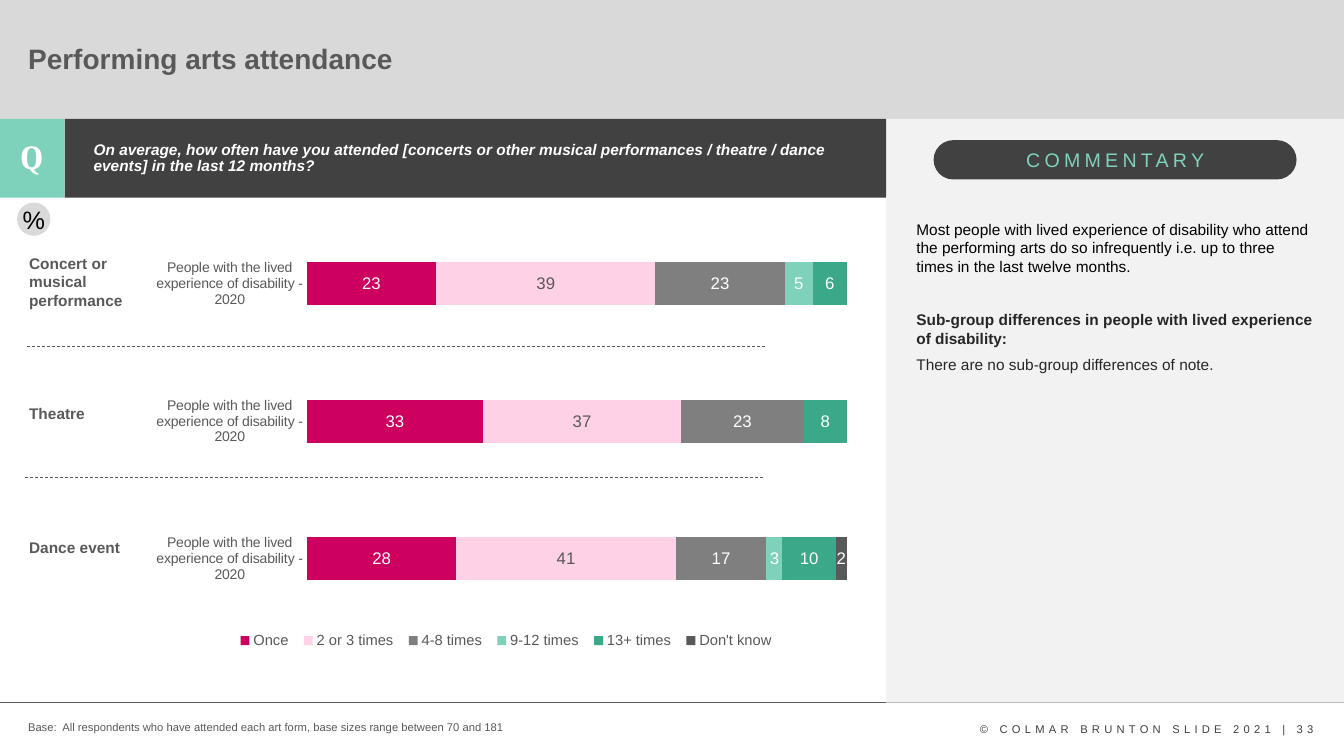
import pptx
import pptx.chart.data
import pptx.dml.color
import pptx.enum.chart
import pptx.enum.dml
import pptx.enum.shapes
import pptx.enum.text
import pptx.oxml
import pptx.oxml.ns
import pptx.util

Inches = pptx.util.Inches
Pt = pptx.util.Pt
RGBColor = pptx.dml.color.RGBColor
Shape = pptx.enum.shapes.MSO_SHAPE
Align = pptx.enum.text.PP_ALIGN
Anchor = pptx.enum.text.MSO_ANCHOR

WHITE = RGBColor(0xFF, 0xFF, 0xFF)
BLACK = RGBColor(0, 0, 0)
INK = RGBColor(0x26, 0x26, 0x26)
CHARCOAL = RGBColor(0x41, 0x41, 0x41)
FOOTER_GREY = RGBColor(0x40, 0x40, 0x40)
SLATE = RGBColor(0x59, 0x59, 0x59)
GREY = RGBColor(0x7F, 0x7F, 0x7F)
SILVER = RGBColor(0xD9, 0xD9, 0xD9)
PANEL = RGBColor(0xF2, 0xF2, 0xF2)
MINT = RGBColor(0x7E, 0xD2, 0xBB)
GREEN = RGBColor(0x3A, 0xA8, 0x89)
MAGENTA = RGBColor(0xCD, 0x00, 0x5F)
PINK = RGBColor(0xFF, 0xD1, 0xE6)

GROUP = "People with the lived experience of disability - 2020"
CATEGORIES = [GROUP, "", GROUP, "", GROUP]
SERIES = [
    ("Once", (28, 33, 23), MAGENTA, WHITE),
    ("2 or 3 times", (41, 37, 39), PINK, SLATE),
    ("4-8 times", (17, 23, 23), GREY, WHITE),
    ("9-12 times", (3, 0, 5), MINT, WHITE),
    ("13+ times", (10, 8, 6), GREEN, WHITE),
    ("Don't know", (2, 0, 0), SLATE, WHITE),
]


class SlideBuilder:
    font = "Arial"

    def __init__(self, slide):
        self.slide = slide

    def style(self, font, size, color, bold=False, italic=False, name=None):
        font.name = name or self.font
        font.size = Pt(size)
        font.bold = bold
        font.italic = italic
        font.color.rgb = color

    def shape(self, kind, left, top, width, height, fill):
        shape = self.slide.shapes.add_shape(
            kind, Inches(left), Inches(top), Inches(width), Inches(height))
        shape.shadow.inherit = False
        shape.fill.solid()
        shape.fill.fore_color.rgb = fill
        shape.line.fill.background()
        return shape

    def fill_para(self, para, text, size, color, bold=False, italic=False,
                  name=None, tracking=0):
        para.text = text
        for span in para.runs:
            self.style(span.font, size, color, bold, italic, name)
            if tracking:
                span.font._element.set("spc", str(tracking * 100))

    def text(self, left, top, width, height, text, size, color, align=Align.LEFT,
             anchor=Anchor.TOP, line_spacing=None, wrap=True, **look):
        box = self.slide.shapes.add_textbox(
            Inches(left), Inches(top), Inches(width), Inches(height))
        frame = box.text_frame
        frame.word_wrap = wrap
        frame.vertical_anchor = anchor
        para = frame.paragraphs[0]
        para.alignment = align
        if line_spacing:
            para.line_spacing = line_spacing
        self.fill_para(para, text, size, color, **look)
        return frame

    def rule(self, left, top, width, dash=None):
        line = self.slide.shapes.add_connector(
            pptx.enum.shapes.MSO_CONNECTOR.STRAIGHT,
            Inches(left), Inches(top), Inches(left + width), Inches(top))
        line.line.color.rgb = SLATE
        line.line.width = Pt(0.5)
        if dash:
            line.line.dash_style = dash
        line._element.spPr.append(pptx.oxml.parse_xml(
            f'<a:effectLst {pptx.oxml.ns.nsdecls("a")}/>'))

    def layout_xml(self, left, top, width, height, target=""):
        return pptx.oxml.parse_xml(
            f'<c:layout {pptx.oxml.ns.nsdecls("c")}><c:manualLayout>{target}'
            '<c:xMode val="edge"/><c:yMode val="edge"/>'
            f'<c:x val="{left}"/><c:y val="{top}"/>'
            f'<c:w val="{width}"/><c:h val="{height}"/>'
            '</c:manualLayout></c:layout>')

    def stacked_chart(self, left, top, width, height):
        data = pptx.chart.data.CategoryChartData()
        data.categories = CATEGORIES
        for name, (dance, theatre, concert), fill, ink in SERIES:
            data.add_series(name, (dance, None, theatre, None, concert))
        chart = self.slide.shapes.add_chart(
            pptx.enum.chart.XL_CHART_TYPE.BAR_STACKED_100,
            Inches(left), Inches(top), Inches(width), Inches(height), data).chart
        self.style(chart.font, 10, BLACK)
        chart.has_title = False
        plot = chart.plots[0]
        plot.gap_width = 60
        plot.overlap = 100
        plot.vary_by_categories = False
        for series, (name, values, fill, ink) in zip(plot.series, SERIES):
            series.format.fill.solid()
            series.format.fill.fore_color.rgb = fill
            labels = series.data_labels
            labels.show_value = True
            labels.number_format = "0;;;"
            labels.number_format_is_linked = False
            labels.position = pptx.enum.chart.XL_LABEL_POSITION.CENTER
            self.style(labels.font, 12, ink)
        axis = chart.category_axis
        axis.major_tick_mark = pptx.enum.chart.XL_TICK_MARK.NONE
        axis.format.line.fill.background()
        self.style(axis.tick_labels.font, 10, SLATE)
        chart.value_axis.has_major_gridlines = False
        chart.value_axis.visible = False
        chart.has_legend = True
        legend = chart.legend
        legend.position = pptx.enum.chart.XL_LEGEND_POSITION.BOTTOM
        legend.include_in_layout = False
        self.style(legend.font, 10.5, SLATE)
        find = pptx.oxml.ns.qn
        for old in legend._element.findall(find("c:layout")):
            legend._element.remove(old)
        legend._element.find(find("c:legendPos")).addnext(
            self.layout_xml(0.12, 0.87, 0.77, 0.06))
        area = chart._chartSpace.chart.plotArea
        for old in area.findall(find("c:layout")):
            area.remove(old)
        area.insert(0, self.layout_xml(
            0.227, 0.114, 0.753, 0.691, '<c:layoutTarget val="inner"/>'))


def main():
    deck = pptx.Presentation()
    deck.slide_width = Inches(13.33)
    deck.slide_height = Inches(7.5)
    page = SlideBuilder(deck.slides.add_slide(deck.slide_layouts[6]))

    page.shape(Shape.RECTANGLE, 0, 0, 13.33, 1.18, SILVER)
    page.text(9.62, 7.12, 3.61, 0.24, "© COLMAR BRUNTON SLIDE 2021 | 33",
              8, FOOTER_GREY, tracking=3)
    page.rule(0, 6.97, 13.33)
    page.shape(Shape.RECTANGLE, 8.79, 1.18, 4.54, 5.79, PANEL)
    page.shape(Shape.RECTANGLE, 0.64, 1.18, 8.15, 0.78, CHARCOAL)
    page.shape(Shape.RECTANGLE, 0, 1.18, 0.64, 0.78, MINT)
    page.text(0.08, 1.3, 0.47, 0.5, "Q", 24, WHITE, align=Align.CENTER,
              bold=True, name="Cambria")
    pill = page.shape(Shape.ROUNDED_RECTANGLE, 9.26, 1.39, 3.6, 0.39, CHARCOAL)
    pill.adjustments[0] = 0.5
    page.text(10.08, 1.42, 2.02, 0.34, "COMMENTARY", 14, MINT, wrap=False, tracking=3)
    page.text(0.18, 0.21, 11.19, 0.78, "Performing arts attendance", 20, SLATE,
              anchor=Anchor.MIDDLE, line_spacing=0.9, bold=True)
    page.text(0.83, 1.36, 7.6, 0.46,
              "On average, how often have you attended [concerts or other musical "
              "performances / theatre / dance events] in the last 12 months?",
              11, WHITE, line_spacing=0.9, bold=True, italic=True)

    page.stacked_chart(1.43, 1.91, 7.11, 4.94)
    for top, height, event in ((2.47, 0.66, "Concert or musical performance"),
                               (3.96, 0.29, "Theatre"), (5.29, 0.29, "Dance event")):
        page.text(0.19, top, 1.41, height, event, 11, SLATE, bold=True)
    for left, top in ((0.27, 3.44), (0.25, 4.74)):
        page.rule(left, top, 7.32, pptx.enum.dml.MSO_LINE.DASH)
    page.text(0.18, 7.1, 5.07, 0.24,
              "Base:  All respondents who have attended each art form, "
              "base sizes range between 70 and 181", 8, SLATE)

    commentary = page.text(
        8.99, 2.13, 4.15, 1.92,
        "Most people with lived experience of disability who attend the performing arts "
        "do so infrequently i.e. up to three times in the last twelve months.", 11, BLACK)
    for gap, bold, text in (
            (25, True, "Sub-group differences in people with lived experience of disability:"),
            (6, False, "There are no sub-group differences of note.")):
        para = commentary.add_paragraph()
        para.space_before = Pt(gap)
        page.fill_para(para, text, 11, INK, bold=bold)

    badge = page.shape(Shape.OVAL, 0.17, 2.01, 0.33, 0.33, SILVER)
    frame = badge.text_frame
    frame.margin_left = frame.margin_right = frame.margin_top = frame.margin_bottom = 0
    frame.vertical_anchor = Anchor.MIDDLE
    frame.word_wrap = False
    frame.paragraphs[0].alignment = Align.CENTER
    page.fill_para(frame.paragraphs[0], "%", 18, BLACK)

    deck.save("out.pptx")


if __name__ == "__main__":
    main()
